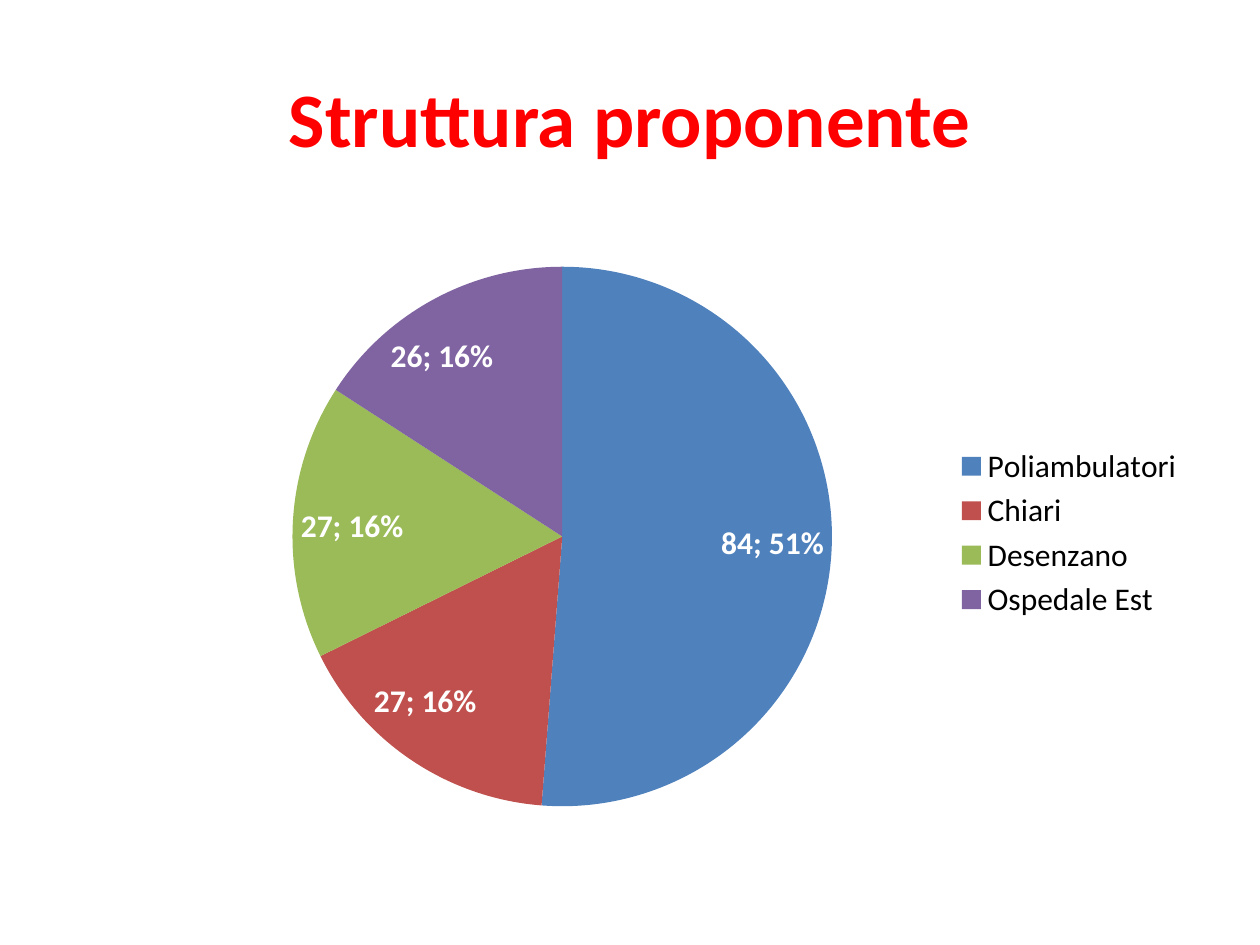
from lxml import etree
from pptx import Presentation
from pptx.chart.data import CategoryChartData
from pptx.dml.color import RGBColor
from pptx.enum.chart import XL_CHART_TYPE as ChartType
from pptx.enum.chart import XL_LABEL_POSITION as LabelPos
from pptx.enum.chart import XL_LEGEND_POSITION as LegendPos
from pptx.enum.text import MSO_ANCHOR, PP_ALIGN
from pptx.oxml.ns import qn
from pptx.util import Pt

PX_PER_INCH = 126
FONT = "Calibri"
SLICES = [
    ("Poliambulatori", 84, "4F81BD"),
    ("Chiari", 27, "C0504D"),
    ("Desenzano", 27, "9BBB59"),
    ("Ospedale Est", 26, "8064A2"),
]


def px(n):
    return round(n * 914400 / PX_PER_INCH)


def rgb(color):
    return RGBColor.from_string(color)


def style_font(font, size, color, bold=False):
    font.name, font.size, font.bold = FONT, Pt(size), bold
    font.color.rgb = rgb(color)


def add_title(s, text, box):
    sp = s.shapes.title
    sp.left, sp.top, sp.width, sp.height = map(px, box)
    tf = sp.text_frame
    tf.text = text
    tf.vertical_anchor = MSO_ANCHOR.MIDDLE
    p = tf.paragraphs[0]
    p.alignment = PP_ALIGN.CENTER
    style_font(p.font, 44, "FF0000", bold=True)


def style_labels(plot):
    plot.has_data_labels = True
    labels = plot.data_labels
    labels.show_value = labels.show_percentage = True
    labels.position = LabelPos.BEST_FIT
    style_font(labels.font, 18, "FFFFFF", bold=True)
    separator = etree.Element(qn("c:separator"))
    separator.text = "; "
    labels._element.find(qn("c:showBubbleSize")).addnext(separator)


def add_pie(s, slices, box):
    data = CategoryChartData()
    data.categories = [name for name, _, _ in slices]
    data.add_series("Series 1", [value for _, value, _ in slices])
    chart = s.shapes.add_chart(ChartType.PIE, *map(px, box), data).chart
    chart.has_title = False
    style_font(chart.font, 18, "000000")
    chart.has_legend = True
    chart.legend.position = LegendPos.RIGHT
    chart.legend.include_in_layout = False
    plot = chart.plots[0]
    plot.vary_by_categories = True
    for i, (_, _, color) in enumerate(slices):
        fill = plot.series[0].points[i].format.fill
        fill.solid()
        fill.fore_color.rgb = rgb(color)
    style_labels(plot)


def main():
    prs = Presentation()
    prs.slide_width, prs.slide_height = px(1260), px(945)
    s = prs.slides.add_slide(prs.slide_layouts[5])
    add_title(s, "Struttura proponente", (63, 38, 1134, 157))
    add_pie(s, SLICES, (63, 221, 1134, 624))
    prs.save("out.pptx")


if __name__ == "__main__":
    main()
